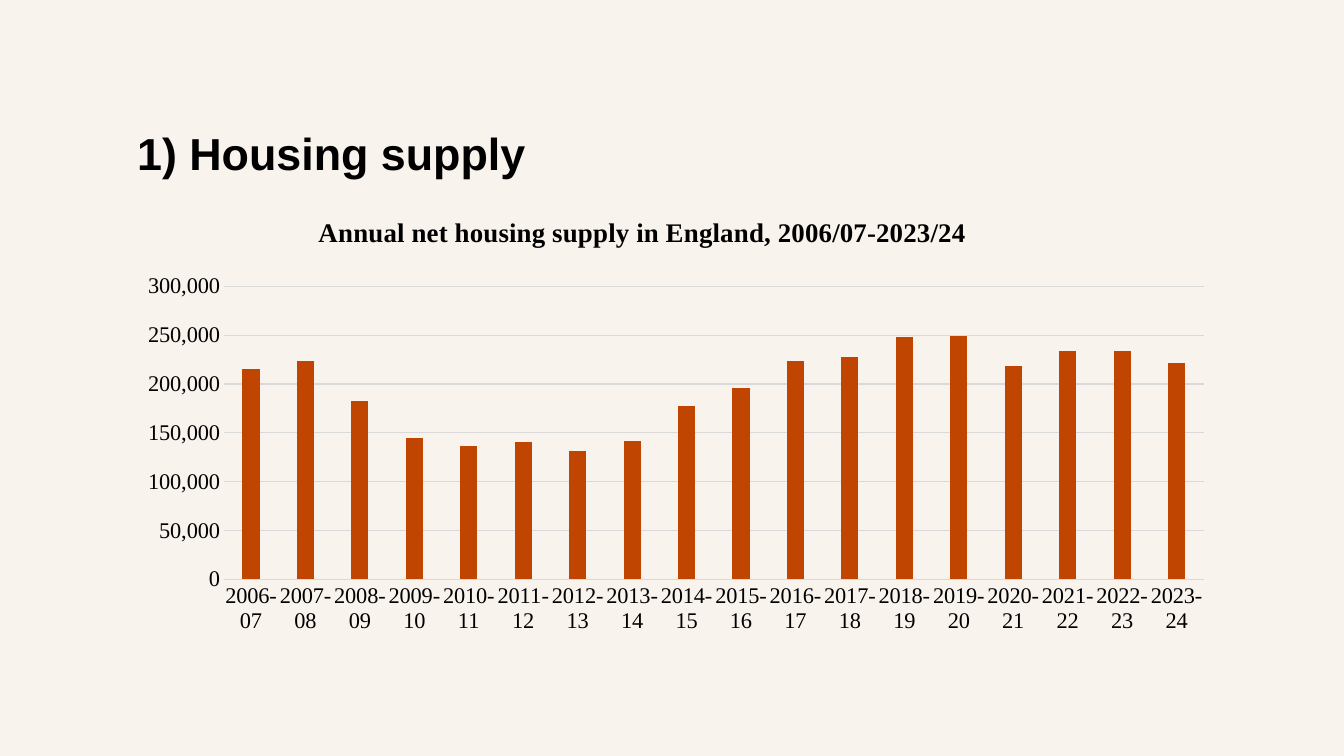
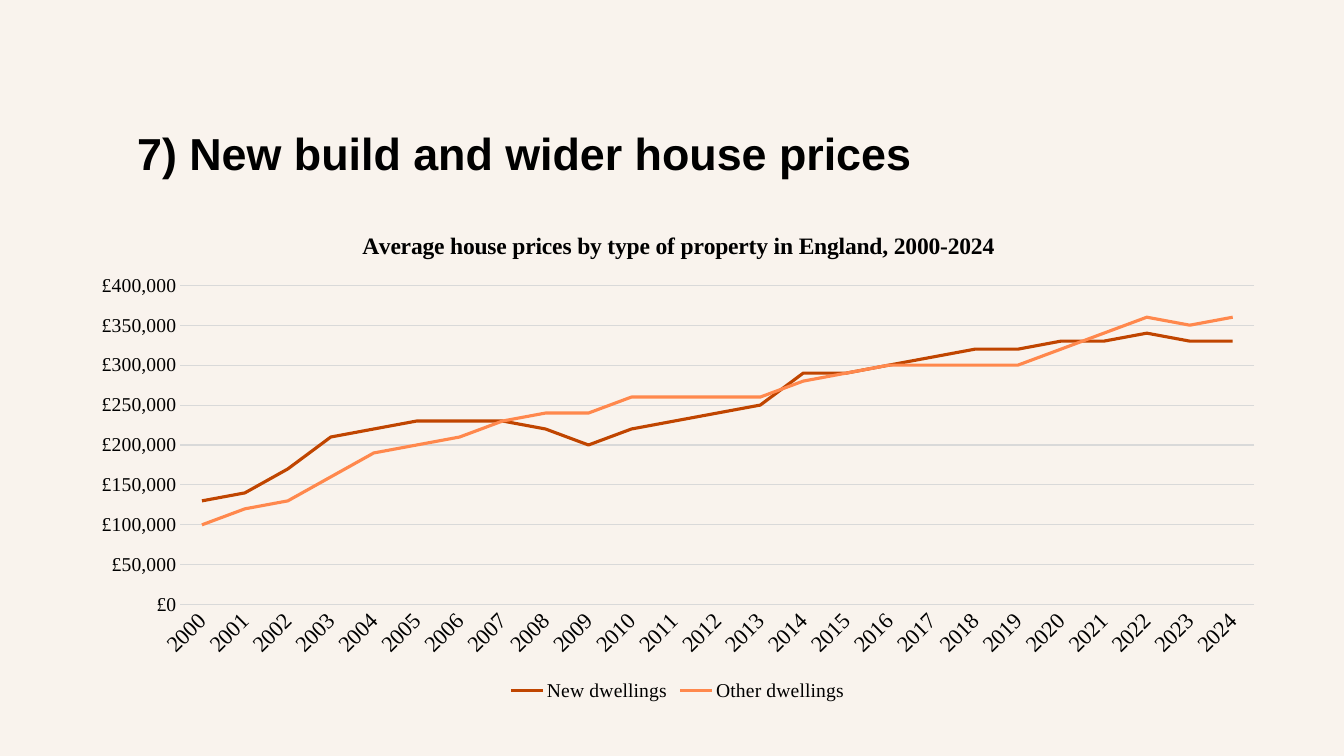
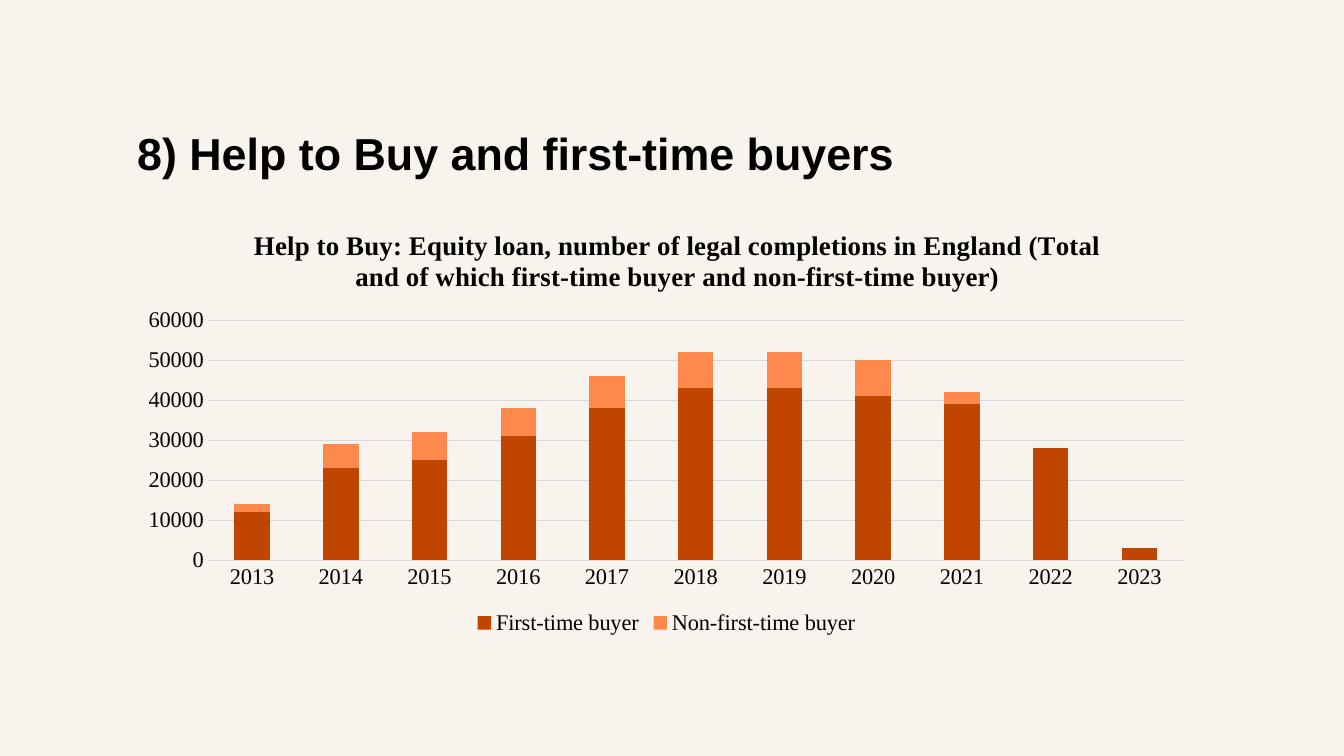
from lxml import etree
from pptx import Presentation
from pptx.chart.data import CategoryChartData
from pptx.dml.color import RGBColor
from pptx.enum.chart import XL_CHART_TYPE, XL_LEGEND_POSITION, XL_TICK_MARK
from pptx.enum.text import MSO_ANCHOR, MSO_AUTO_SIZE, PP_ALIGN
from pptx.oxml.ns import qn
from pptx.util import Inches, Pt

BARS = XL_CHART_TYPE.COLUMN_CLUSTERED
STACK = XL_CHART_TYPE.COLUMN_STACKED
LINES = XL_CHART_TYPE.LINE
BOTTOM = XL_LEGEND_POSITION.BOTTOM
NO_TICK = XL_TICK_MARK.NONE
TOP, LEFT, FIXED = MSO_ANCHOR.TOP, PP_ALIGN.LEFT, MSO_AUTO_SIZE.NONE

PAPER, INK, GRID = "F9F3ED", "000000", "D9D9D9"
TONES = ["C04500", "FF884D"]
HEAD_BOX = (1.26, 1.15, 10.79, 0.59)

# Boxes are left, top, width, height on the slide, in inches; values are thousands.
SLIDES = [
    {
        "head": "1) Housing supply",
        "title": "Annual net housing supply in England, 2006/07-2023/24",
        "kind": BARS, "box": (1.26, 1.87, 10.79, 4.94),
        "plot": (2.22, 2.84, 9.72, 2.91), "title_at": (3.11, 2.09),
        "size": 16, "format": "#,##0", "top": 300, "step": 50,
        "gap": 219, "overlap": -27,
        "cats": [f"{year}-{(year + 1) % 100:02}" for year in range(2006, 2024)],
        "series": {
            "Series 1": [215, 224, 183, 145, 137, 141, 131, 142, 177,
                         196, 223, 228, 248, 249, 218, 234, 234, 221],
        },
    },
    {
        "head": "7) New build and wider house prices",
        "title": "Average house prices by type of property in England, 2000-2024",
        "kind": LINES, "box": (0.76, 2.07, 11.92, 4.93),
        "plot": (1.79, 2.83, 10.65, 3.17), "title_at": (3.55, 2.25),
        "size": 14, "format": '"£"#,##0', "top": 400, "step": 50, "turn": -45,
        "cats": [str(year) for year in range(2000, 2025)],
        "series": {
            "New dwellings": [130, 140, 170, 210, 220, 230, 230, 230, 220,
                              200, 220, 230, 240, 250, 290, 290, 300, 310,
                              320, 320, 330, 330, 340, 330, 330],
            "Other dwellings": [100, 120, 130, 160, 190, 200, 210, 230, 240,
                                240, 260, 260, 260, 260, 280, 290, 300, 300,
                                300, 300, 320, 340, 360, 350, 360],
        },
    },
    {
        "head": "8) Help to Buy and first-time buyers",
        "title": "Help to Buy: Equity loan, number of legal completions in England "
                 "(Total and of which first-time buyer and non-first-time buyer)",
        "kind": STACK, "box": (1.26, 2.06, 10.7, 4.29),
        "plot": (2.06, 3.18, 9.68, 2.38), "title_at": (2.47, 2.22),
        "size": 16, "format": "General", "top": 60, "step": 10,
        "gap": 150, "overlap": 100,
        "cats": [str(year) for year in range(2013, 2024)],
        "series": {
            "First-time buyer": [12, 23, 25, 31, 38, 43, 43, 41, 39, 28, 3],
            "Non-first-time buyer": [2, 6, 7, 7, 8, 9, 9, 9, 3, 0, 0],
        },
    },
]


def color(code):
    return RGBColor.from_string(code)


def assign(item, **values):
    for name, value in values.items():
        setattr(item, name, value)


def set_font(font, size, name="Times New Roman", bold=False):
    assign(font, size=Pt(size), name=name, bold=bold)
    font.color.rgb = color(INK)


def set_line(line, tone, width):
    line.color.rgb = color(tone)
    line.width = Pt(width)


def place(part, index, box, frame):
    """Give a chart part a manual layout, as shares of the chart frame."""
    old = part.find(qn("c:layout"))
    if old is not None:
        part.remove(old)
    layout = etree.Element(qn("c:layout"))
    manual = etree.SubElement(layout, qn("c:manualLayout"))
    left, top, width, height = frame
    shares = {"x": (box[0] - left) / width, "y": (box[1] - top) / height}
    values = {"xMode": "edge", "yMode": "edge"}
    if len(box) == 4:
        values = {"layoutTarget": "inner", **values}
        shares.update(w=box[2] / width, h=box[3] / height)
    values.update((key, f"{share:.4f}") for key, share in shares.items())
    for key, value in values.items():
        etree.SubElement(manual, qn(f"c:{key}")).set("val", value)
    part.insert(index, layout)


def add_head(slide, text):
    head = slide.shapes.title
    names = ("left", "top", "width", "height")
    assign(head, **dict(zip(names, map(Inches, HEAD_BOX))))
    frame = head.text_frame
    assign(frame, text=text, word_wrap=True, auto_size=FIXED, vertical_anchor=TOP,
           margin_top=Inches(0.1), margin_bottom=0)
    line = frame.paragraphs[0]
    line.alignment = LEFT
    set_font(line.font, 32, "Arial", True)


def style_axes(chart, spec):
    cats, vals = chart.category_axis, chart.value_axis
    for axis in (cats, vals):
        assign(axis, major_tick_mark=NO_TICK, minor_tick_mark=NO_TICK)
    set_font(cats.tick_labels.font, 16)
    set_font(vals.tick_labels.font, spec["size"])
    set_line(cats.format.line, GRID, 0.75)
    vals.format.line.fill.background()
    set_line(vals.major_gridlines.format.line, GRID, 0.75)
    assign(vals, minimum_scale=0, maximum_scale=spec["top"] * 1000,
           major_unit=spec["step"] * 1000)
    assign(vals.tick_labels, number_format=spec["format"],
           number_format_is_linked=False)
    if "turn" in spec:
        body = cats.tick_labels.font._element.getroottree().find(
            f".//{qn('c:catAx')}/{qn('c:txPr')}/{qn('a:bodyPr')}")
        body.set("rot", str(spec["turn"] * 60000))
        body.set("vert", "horz")


def style_series(plot, spec):
    plot.vary_by_categories = False
    if spec["kind"] != LINES:
        assign(plot, gap_width=spec["gap"], overlap=spec["overlap"])
    for series, tone in zip(plot.series, TONES):
        if spec["kind"] == LINES:
            series.smooth = False
            set_line(series.format.line, tone, 2.25)
        else:
            series.format.fill.solid()
            series.format.fill.fore_color.rgb = color(tone)


def add_graph(slide, spec):
    data = CategoryChartData(number_format=spec["format"])
    data.categories = spec["cats"]
    for name, values in spec["series"].items():
        data.add_series(name, [value * 1000 for value in values])
    box = spec["box"]
    chart = slide.shapes.add_chart(spec["kind"], *map(Inches, box), data).chart
    set_font(chart.font, spec["size"])
    style_axes(chart, spec)
    style_series(chart.plots[0], spec)

    chart.has_title = True
    words = chart.chart_title.text_frame
    words.text = spec["title"]
    set_font(words.paragraphs[0].runs[0].font, spec["size"] * 1.2, bold=True)
    chart.chart_title.include_in_layout = False
    chart.has_legend = len(spec["series"]) > 1
    if chart.has_legend:
        assign(chart.legend, position=BOTTOM, include_in_layout=False)
        set_font(chart.legend.font, spec["size"])

    root = chart.element.find(qn("c:chart"))
    place(root.find(qn("c:plotArea")), 0, spec["plot"], box)
    place(root.find(qn("c:title")), 1, spec["title_at"], box)


def main():
    deck = Presentation()
    assign(deck, slide_width=Inches(13.33), slide_height=Inches(7.5))
    back = deck.slide_master.background.fill
    back.solid()
    back.fore_color.rgb = color(PAPER)
    for spec in SLIDES:
        slide = deck.slides.add_slide(deck.slide_layouts[5])
        add_head(slide, spec["head"])
        add_graph(slide, spec)
    deck.save("out.pptx")


if __name__ == "__main__":
    main()
